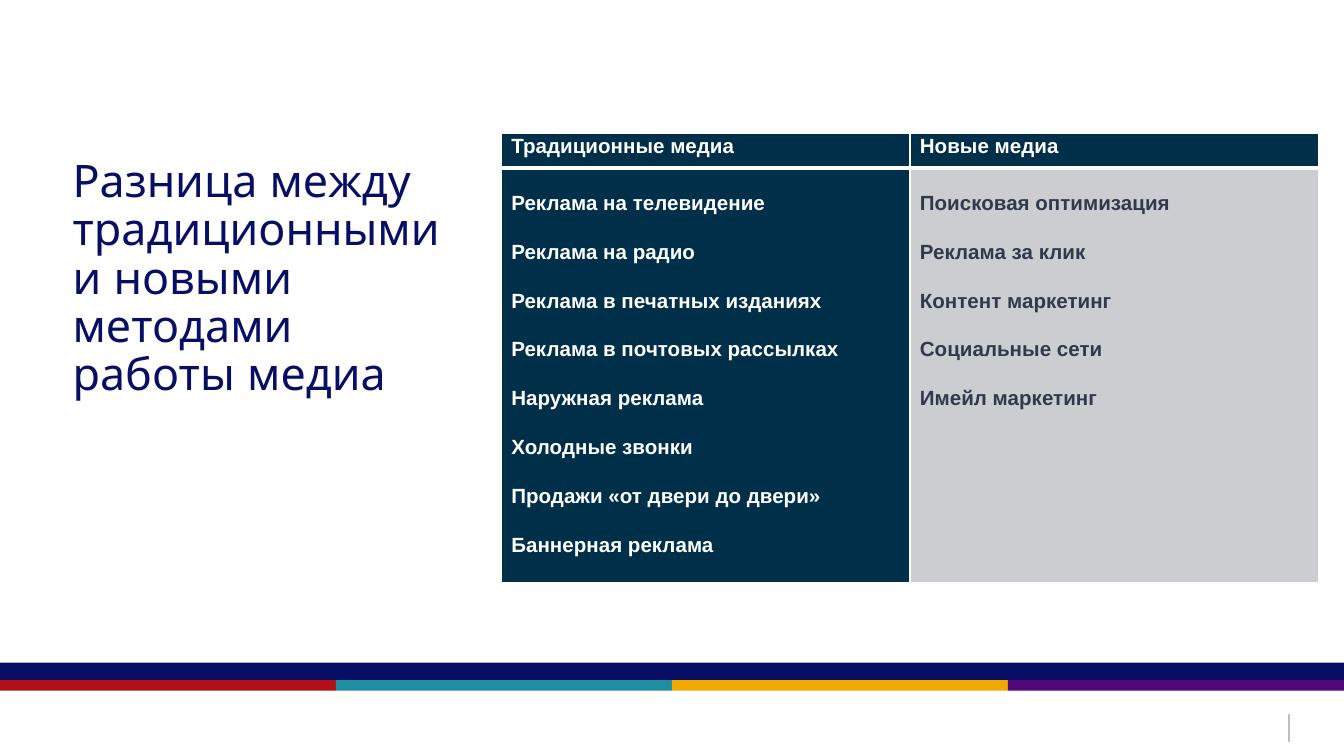
from lxml.etree import SubElement
from pptx import Presentation
from pptx.dml.color import RGBColor
from pptx.enum.shapes import MSO_CONNECTOR, MSO_SHAPE
from pptx.enum.text import MSO_ANCHOR, PP_ALIGN
from pptx.oxml.ns import qn
from pptx.util import Inches, Pt

TITLE = "Разница между традиционными и новыми методами работы медиа"
MEDIA = {
    "Традиционные медиа": [
        "Реклама на телевидение", "Реклама на радио",
        "Реклама в печатных изданиях", "Реклама в почтовых рассылках",
        "Наружная реклама", "Холодные звонки",
        "Продажи «от двери до двери»", "Баннерная реклама",
    ],
    "Новые медиа": [
        "Поисковая оптимизация", "Реклама за клик", "Контент маркетинг",
        "Социальные сети", "Имейл маркетинг",
    ],
}
COLORS = {
    "navy": "070E63", "red": "B11116", "teal": "1F8DA2", "amber": "F2A900",
    "purple": "500878", "deep": "002F4A", "pale": "CCCDD0", "slate": "31394D",
    "white": "FFFFFF", "gray": "BFBFBF",
}
STRIPES = ["red", "teal", "amber", "purple"]
BODY = [("deep", "white"), ("pale", "slate")]  # fill and text of each column
ROWS = [0.26, 3.09]
WIDE = 10
HIGH = WIDE * 9 / 16
GAP = 13.1  # one line of table text, in points


def rgb(name):
    return RGBColor.from_string(COLORS[name])


def write(frame, lines, font, size, color, bold=False, lead=1.0, gap=0):
    frame.word_wrap = True
    for i, line in enumerate(lines):
        para = frame.paragraphs[0] if i == 0 else frame.add_paragraph()
        para.alignment = PP_ALIGN.LEFT
        para.line_spacing = lead
        para.space_before = Pt(gap if i else 0)
        run = para.add_run()
        run.text = line
        run.font.name, run.font.size, run.font.bold = font, Pt(size), bold
        run.font.color.rgb = rgb(color)


def bar(slide, left, top, width, height, color):
    box = slide.shapes.add_shape(
        MSO_SHAPE.RECTANGLE, *map(Inches, (left, top, width, height)))
    box.shadow.inherit = False
    box.fill.solid()
    box.fill.fore_color.rgb = rgb(color)
    box.line.fill.background()


def edge(cell, **widths):
    """Draw white cell borders; each keyword is a side with its points."""
    props = cell._tc.get_or_add_tcPr()
    for i, side in enumerate("LRTB"):
        line = props.makeelement(qn(f"a:ln{side}"), w=str(Pt(widths.get(side, 1))))
        fill = SubElement(line, qn("a:solidFill"))
        SubElement(fill, qn("a:srgbClr"), val=COLORS["white"])
        props.insert(i, line)


def fill_cell(cell, lines, fill, color, top=0, **sides):
    cell.fill.solid()
    cell.fill.fore_color.rgb = rgb(fill)
    cell.margin_left = cell.margin_right = Pt(5.4)
    cell.margin_top, cell.margin_bottom = Pt(top), 0
    cell.vertical_anchor = MSO_ANCHOR.TOP
    write(cell.text_frame, lines, "Arial", 11, color, bold=True, lead=1.07, gap=GAP)
    edge(cell, **sides)


def add_footer(slide):
    bar(slide, 0, 4.93, WIDE, 0.13, "navy")
    part = WIDE / len(STRIPES)
    for i, color in enumerate(STRIPES):
        bar(slide, i * part, 5.06, part, 0.08, color)
    rule = slide.shapes.add_connector(
        MSO_CONNECTOR.STRAIGHT, *map(Inches, (9.59, 5.52, 9.59, 5.31)))
    rule.line.color.rgb = rgb("gray")
    rule.line.width = Pt(0.75)
    SubElement(rule._element.spPr, qn("a:effectLst"))


def add_title(slide):
    title = slide.shapes.title
    title.left, title.top, title.width, title.height = map(
        Inches, (0.44, 1.08, 2.96, 3.21))
    frame = title.text_frame
    frame.margin_left = frame.margin_right = Inches(0.1)
    frame.margin_top = frame.margin_bottom = Inches(0.1)
    frame.vertical_anchor = MSO_ANCHOR.TOP
    write(frame, [TITLE], "Quicksand", 24, "navy", lead=0.9)


def add_media(slide):
    table = slide.shapes.add_table(
        len(ROWS), len(MEDIA), *map(Inches, (3.73, 0.99, 6.08, sum(ROWS)))).table
    for row, height in zip(table.rows, ROWS):
        row.height = Inches(height)
    for i, (head, items) in enumerate(MEDIA.items()):
        table.columns[i].width = Inches(3.04)
        fill_cell(table.cell(0, i), [head], "deep", "white", B=3)
        fill_cell(table.cell(1, i), items, *BODY[i], top=GAP - 1.2)


def main():
    deck = Presentation()
    deck.slide_width, deck.slide_height = Inches(WIDE), Inches(HIGH)
    slide = deck.slides.add_slide(deck.slide_layouts[5])
    add_footer(slide)
    add_title(slide)
    add_media(slide)
    deck.save("out.pptx")


if __name__ == "__main__":
    main()
